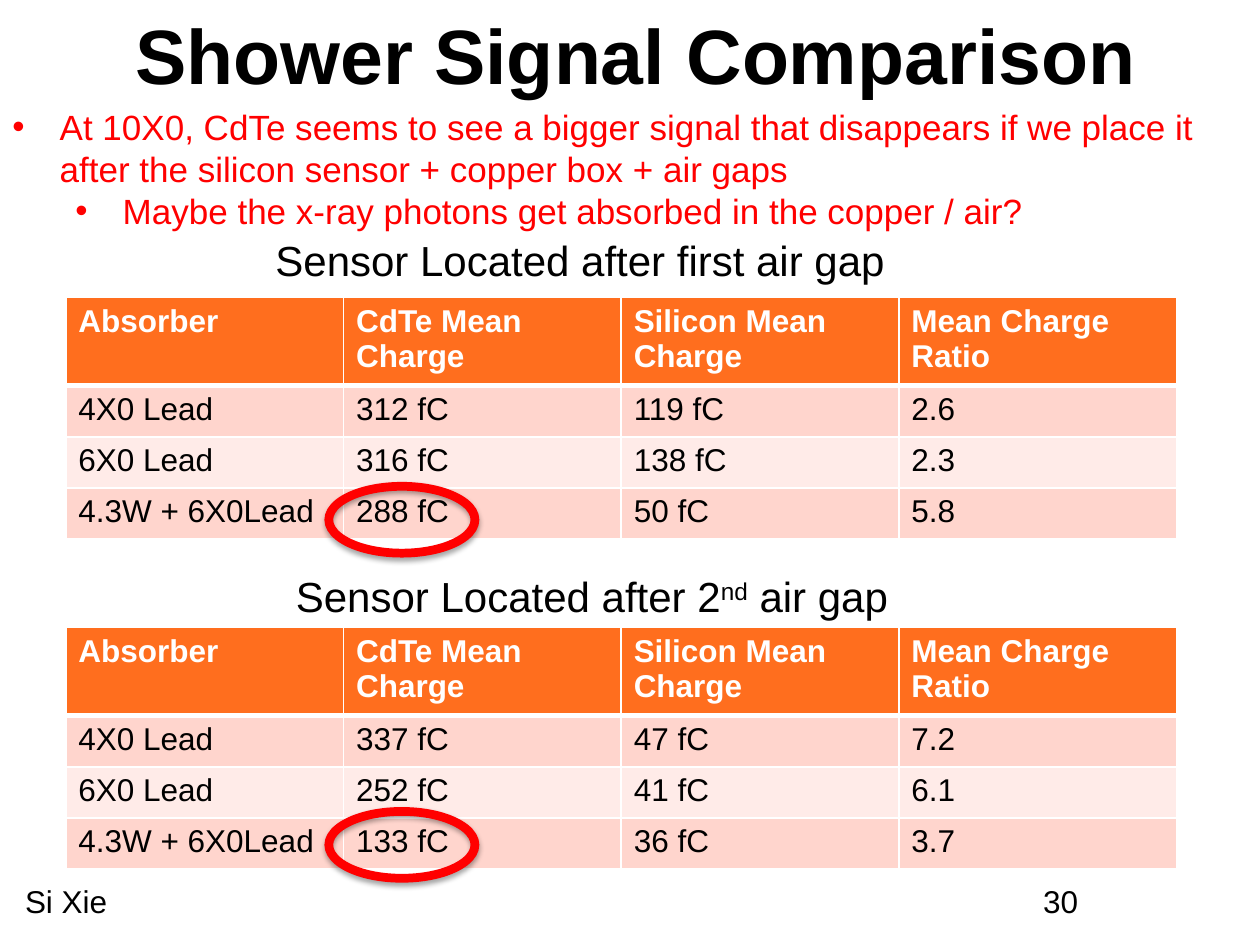
from lxml.etree import SubElement
from pptx import Presentation
from pptx.dml.color import RGBColor
from pptx.enum.shapes import MSO_SHAPE
from pptx.enum.text import MSO_ANCHOR, PP_ALIGN
from pptx.oxml.ns import qn
from pptx.util import Pt

HEAD = ["Absorber", "CdTe Mean Charge", "Silicon Mean Charge", "Mean Charge Ratio"]
FIRST = [
    ["4X0 Lead", "312 fC", "119 fC", "2.6"],
    ["6X0 Lead", "316 fC", "138 fC", "2.3"],
    ["4.3W + 6X0Lead", "288 fC", "50 fC", "5.8"],
]
SECOND = [
    ["4X0 Lead", "337 fC", "47 fC", "7.2"],
    ["6X0 Lead", "252 fC", "41 fC", "6.1"],
    ["4.3W + 6X0Lead", "133 fC", "36 fC", "3.7"],
]
NOTES = [
    "At 10X0, CdTe seems to see a bigger signal that disappears if we place it "
    "after the silicon sensor + copper box + air gaps",
    "Maybe the x-ray photons get absorbed in the copper / air?",
]


def color(code):
    """Turn a hex string into a colour."""
    return RGBColor.from_string(code)


def add_run(para, text, size, code="000000", bold=False, base=0):
    """Add one formatted run to a paragraph."""
    run = para.add_run()
    run.text = text
    font = run.font
    font.name, font.size, font.bold = "Arial", Pt(size), bold
    font.color.rgb = color(code)
    if base:
        run._r.get_or_add_rPr().set("baseline", str(base * 1000))


def add_title(slide, text):
    """Place and fill the title."""
    title = slide.shapes.title
    title.left, title.top, title.width, title.height = Pt(7.2), Pt(0.7), Pt(712.8), Pt(90)
    frame = title.text_frame
    frame.word_wrap = True
    frame.vertical_anchor = MSO_ANCHOR.TOP
    para = frame.paragraphs[0]
    para.alignment = PP_ALIGN.CENTER
    add_run(para, text, 44, bold=True)


def add_box(slide, left, top, width, height):
    """Add a wrapping text box and return its frame."""
    frame = slide.shapes.add_textbox(Pt(left), Pt(top), Pt(width), Pt(height)).text_frame
    frame.word_wrap = True
    return frame


def add_label(slide, left, top, width, size, *parts):
    """Add a one-line label from pairs of text and baseline shift."""
    para = add_box(slide, left, top, width, size * 1.5).paragraphs[0]
    for text, base in parts:
        add_run(para, text, size, base=base)


def add_notes(slide, lines):
    """Add the bullet list, each line one level deeper."""
    frame = add_box(slide, 0, 56.9, 714.2, 80)
    for level, text in enumerate(lines):
        para = frame.add_paragraph() if level else frame.paragraphs[0]
        para.level = level
        props = para._p.get_or_add_pPr()
        props.set("marL", str(Pt(27 + 36 * level)))
        props.set("indent", str(-Pt(27)))
        SubElement(props, qn("a:buFont")).set("typeface", "Arial")
        SubElement(props, qn("a:buChar")).set("char", "•")
        add_run(para, text, 20, "FF0000")


def add_edges(cell, base):
    """Give a cell white borders, the bottom one of its own width."""
    props = cell._tc.get_or_add_tcPr()
    for side in "LRTB":
        width = base if side == "B" else 1
        line = SubElement(props, qn("a:ln" + side), w=str(Pt(width)))
        fill = SubElement(line, qn("a:solidFill"))
        SubElement(fill, qn("a:srgbClr"), val="FFFFFF")


def add_grid(slide, top, body):
    """Add a table with the shared header above the body rows."""
    rows = [HEAD] + body
    table = slide.shapes.add_table(
        len(rows), len(HEAD), Pt(37.6), Pt(top), Pt(634.8), Pt(134.4)
    ).table
    for col in table.columns:
        col.width = Pt(158.7)
    for y, row in enumerate(rows):
        table.rows[y].height = Pt(29.2 if y else 46.8)
        shade = ("FFD5CD" if y % 2 else "FFEBE8") if y else "FF6E1E"
        for x, text in enumerate(row):
            cell = table.cell(y, x)
            add_edges(cell, 1 if y else 3)
            cell.fill.solid()
            cell.fill.fore_color.rgb = color(shade)
            ink = "000000" if y else "FFFFFF"
            add_run(cell.text_frame.paragraphs[0], text, 18, ink, bold=not y)


def add_ring(slide, top):
    """Add a red ring with a soft shadow."""
    ring = slide.shapes.add_shape(
        MSO_SHAPE.OVAL, Pt(187.9), Pt(top), Pt(83.5), Pt(38.2)
    )
    ring.fill.background()
    ring.line.color.rgb = color("FF0000")
    ring.line.width = Pt(5)
    ring.shadow.inherit = False
    effects = ring._element.spPr.find(qn("a:effectLst"))
    shade = SubElement(
        effects, qn("a:outerShdw"), blurRad=str(Pt(3.1)), dist=str(Pt(1.8)),
        dir="5400000", rotWithShape="0",
    )
    ink = SubElement(shade, qn("a:srgbClr"), val="000000")
    SubElement(ink, qn("a:alpha"), val="35000")


def main():
    """Build the slide and save it."""
    deck = Presentation()
    deck.slide_width, deck.slide_height = Pt(720), Pt(540)
    slide = deck.slides.add_slide(deck.slide_layouts[5])
    add_title(slide, "Shower Signal Comparison")
    add_label(slide, 7.2, 500.4, 228, 18, ("Si Xie", 0))
    add_label(slide, 589, 500.4, 83, 18, ("30", 0))
    add_grid(slide, 170, FIRST)
    add_grid(slide, 358.6, SECOND)
    add_label(slide, 150.3, 130.3, 383, 24, ("Sensor Located after first air gap", 0))
    add_notes(slide, NOTES)
    add_label(
        slide, 162, 322.6, 383, 24,
        ("Sensor Located after 2", 0), ("nd", 30), (" air gap", 0),
    )
    for top in (277.9, 463.7):
        add_ring(slide, top)
    deck.save("out.pptx")


if __name__ == "__main__":
    main()
